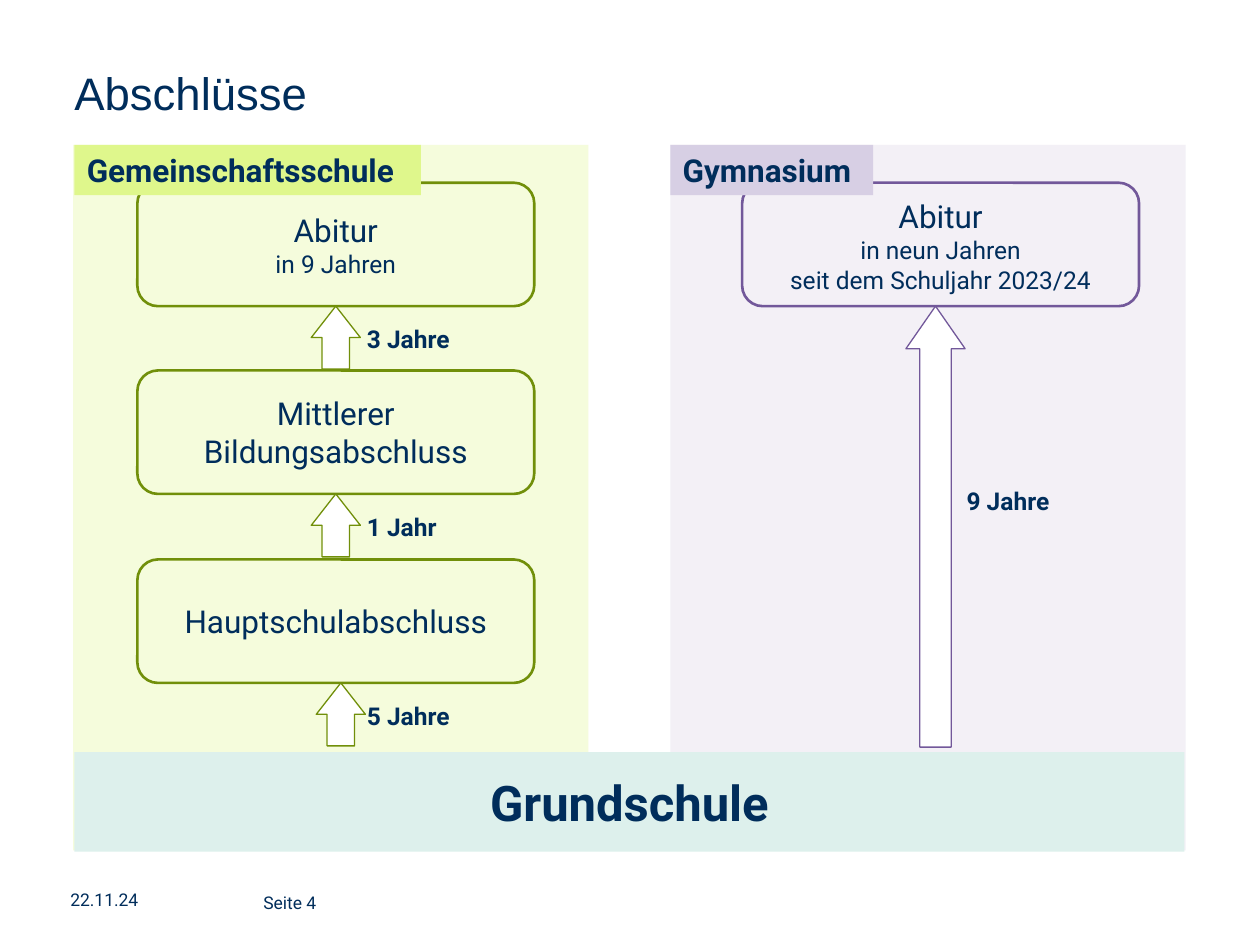
import pptx
import pptx.dml.color
import pptx.enum.shapes
import pptx.enum.text
import pptx.oxml.ns
import pptx.util
from lxml import etree

Inches = pptx.util.Inches
SHAPES = pptx.enum.shapes.MSO_SHAPE
ALIGN = pptx.enum.text.PP_ALIGN
ANCHOR = pptx.enum.text.MSO_ANCHOR

NAVY = "002D5B"
WHITE = "FFFFFF"
GREEN = "718F0A"
PURPLE = "72589A"
BOX_WIDTH, BOX_HEIGHT = 3.15, 0.98
PANEL_TOP = 1.15

# top of the box, lines as (text, size), left of the arrow below, duration
COMMUNITY_LEVELS = [
    (1.45, [("Abitur", 18), ("in 9 Jahren", 14)], 2.47, "3 Jahre"),
    (2.94, [("Mittlerer Bildungsabschluss", 18)], 2.47, "1 Jahr"),
    (4.44, [("Hauptschulabschluss", 18)], 2.51, "5 Jahre"),
]
GYMNASIUM_LINES = [("Abitur", 18), ("in neun Jahren", 14),
                   ("seit dem Schuljahr 2023/24", 14)]


def color(hex_value):
    return pptx.dml.color.RGBColor.from_string(hex_value)


def write(shape, lines, font="Roboto", bold=False, align=ALIGN.LEFT,
          anchor=ANCHOR.TOP, wrap=True, inset=None):
    """Fill a shape with one paragraph per (text, size) pair."""
    frame = shape.text_frame
    frame.word_wrap = wrap
    frame.vertical_anchor = anchor
    if inset is not None:
        frame.margin_left = frame.margin_right = Inches(inset)
        frame.margin_top = frame.margin_bottom = Inches(inset)
    frame.text = "\n".join(text for text, _ in lines)
    for paragraph, (_, size) in zip(frame.paragraphs, lines):
        paragraph.alignment = align
        font_format = paragraph.runs[0].font
        font_format.name = font
        font_format.size = pptx.util.Pt(size)
        font_format.bold = bold
        font_format.color.rgb = color(NAVY)


def add_shape(slide, kind, left, top, width, height, fill=None, line=None, line_width=0.75):
    shape = slide.shapes.add_shape(
        kind, Inches(left), Inches(top), Inches(width), Inches(height))
    shape.shadow.inherit = False
    if fill:
        shape.fill.solid()
        shape.fill.fore_color.rgb = color(fill)
    else:
        shape.fill.background()
    if line:
        shape.line.color.rgb = color(line)
        shape.line.width = pptx.util.Pt(line_width)
    else:
        shape.line.fill.background()
    return shape


def add_text(slide, left, top, width, height, text, size, **style):
    box = slide.shapes.add_textbox(
        Inches(left), Inches(top), Inches(width), Inches(height))
    write(box, [(text, size)], **style)
    return box


def add_panel(slide, left, fill):
    """Add the background of a school type, 60 % opaque."""
    panel = add_shape(slide, SHAPES.RECTANGLE, left, PANEL_TOP, 4.09, 5.6, fill)
    fill_color = panel.fill._xPr.find(".//" + pptx.oxml.ns.qn("a:srgbClr"))
    etree.SubElement(fill_color, pptx.oxml.ns.qn("a:alpha"), val="60000")


def add_tag(slide, left, width, fill, text):
    tag = add_shape(slide, SHAPES.RECTANGLE, left, PANEL_TOP, width, 0.4, fill)
    write(tag, [(text, 18)], bold=True, wrap=False)


def add_degree(slide, left, top, line, lines, anchor=ANCHOR.MIDDLE):
    degree = add_shape(slide, SHAPES.FLOWCHART_ALTERNATE_PROCESS, left, top,
                       BOX_WIDTH, BOX_HEIGHT, line=line, line_width=1.5)
    write(degree, lines, align=ALIGN.CENTER, anchor=anchor)


def add_arrow(slide, left, top, width, height, line, adjustments):
    arrow = add_shape(slide, SHAPES.UP_ARROW, left, top, width, height, WHITE, line)
    for index, value in enumerate(adjustments):
        arrow.adjustments[index] = value


def add_duration(slide, left, top, text):
    duration = add_shape(
        slide, SHAPES.FLOWCHART_ALTERNATE_PROCESS, left, top, 0.79, 0.24)
    write(duration, [(text, 14)], bold=True, inset=0)


def add_community_school(slide):
    add_panel(slide, 0.58, "EFFBC6")
    for top, lines, arrow_left, duration in COMMUNITY_LEVELS:
        add_degree(slide, 1.09, top, GREEN, lines)
        add_arrow(slide, arrow_left, top + BOX_HEIGHT, 0.39, 0.5, GREEN, (0.56, 0.64))
        add_duration(slide, 2.9, top + 1.11, duration)
    add_tag(slide, 0.59, 2.75, "DFF78C", "Gemeinschaftsschule")


def add_gymnasium(slide):
    add_panel(slide, 5.32, "EBE7F1")
    add_degree(slide, 5.89, 1.45, PURPLE, GYMNASIUM_LINES, ANCHOR.BOTTOM)
    add_arrow(slide, 7.19, 2.43, 0.47, 3.5, PURPLE, (0.53, 0.72))
    add_tag(slide, 5.32, 1.61, "D7CFE4", "Gymnasium")
    add_duration(slide, 7.66, 3.85, "9 Jahre")


def main():
    presentation = pptx.Presentation()
    presentation.slide_width = Inches(10)
    presentation.slide_height = Inches(7.5)
    slide = presentation.slides.add_slide(presentation.slide_layouts[6])

    add_text(slide, 2.09, 7.04, 1.26, 0.24, "Seite 4", 10,
             anchor=ANCHOR.MIDDLE, wrap=False, inset=0)
    add_text(slide, 0.46, 7.01, 1.26, 0.24, "22.11.24", 10)
    add_community_school(slide)
    add_gymnasium(slide)
    primary_school = add_shape(slide, SHAPES.RECTANGLE, 0.59, 5.97, 8.81, 0.79, "DDF0EC")
    write(primary_school, [("Grundschule", 28)], bold=True, align=ALIGN.CENTER,
          anchor=ANCHOR.MIDDLE, wrap=False)
    title = add_text(slide, 0.59, 0.58, 8.82, 0.54, "Abschlüsse", 26,
                     font="Arial", inset=0)
    title.text_frame.paragraphs[0].line_spacing = 0.85

    presentation.save("out.pptx")


if __name__ == "__main__":
    main()
